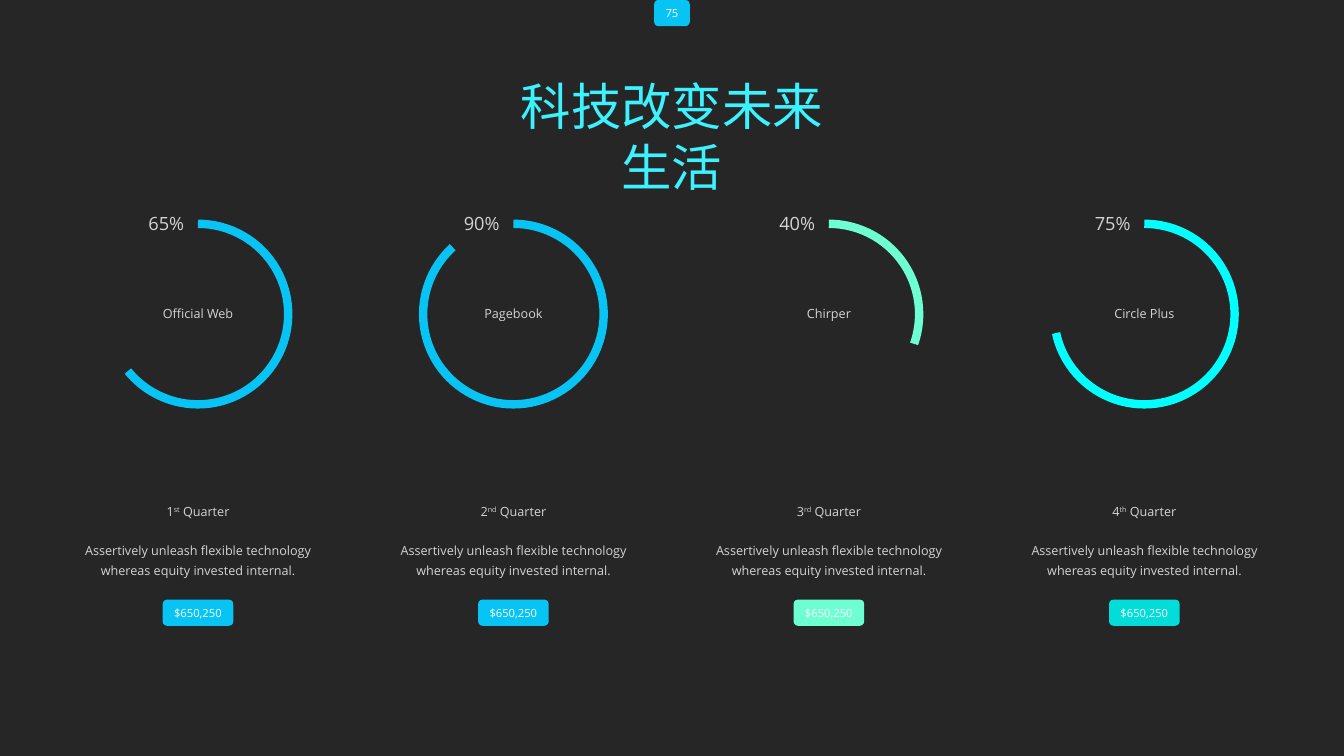
import dataclasses

import lxml.etree
import pptx
import pptx.dml.color
import pptx.enum.shapes
import pptx.enum.text
import pptx.oxml.ns
import pptx.shapes.autoshape
import pptx.slide
import pptx.text.text
import pptx.util

Cm = pptx.util.Cm
Shapes = pptx.enum.shapes.MSO_SHAPE
CENTER = pptx.enum.text.PP_ALIGN.CENTER
TOP = pptx.enum.text.MSO_ANCHOR.TOP
MIDDLE = pptx.enum.text.MSO_ANCHOR.MIDDLE


@dataclasses.dataclass(frozen=True)
class Theme:
    background: str = "262626"
    body: str = "D4D4D4"
    white: str = "FFFFFF"
    title: str = "3CF2FF"
    blue: str = "08C4F5"
    mint: str = "6DFFD1"
    cyan: str = "02FFFF"
    teal: str = "02DDDA"
    latin: str = "Open Sans"
    chinese: str = "Noto Sans CJK SC"
    pill_size: float = 8
    body_size: float = 9
    percent_size: float = 13
    title_size: float = 36
    ring_width: float = 6
    line_spacing: float = 1.3
    heading_gap: float = 14


THEME = Theme()


@dataclasses.dataclass(frozen=True)
class Quarter:
    ordinal: str
    suffix: str
    channel: str
    percent: str
    arc_end: float  # degrees clockwise from three o'clock
    ring_color: str
    pill_color: str


@dataclasses.dataclass(frozen=True)
class Area:
    """A rectangle in centimetres, placed by its horizontal centre."""
    center: float
    top: float
    width: float
    height: float

    def lengths(self) -> tuple[int, int, int, int]:
        left = self.center - self.width / 2
        return Cm(left), Cm(self.top), Cm(self.width), Cm(self.height)


QUARTERS = [
    Quarter("1", "st", "Official Web", "65%", 140.86, THEME.blue, THEME.blue),
    Quarter("2", "nd", "Pagebook", "90%", 227.78, THEME.blue, THEME.blue),
    Quarter("3", "rd", "Chirper", "40%", 19.27, THEME.mint, THEME.mint),
    Quarter("4", "th", "Circle Plus", "75%", 167.88, THEME.cyan, THEME.teal),
]
SUMMARY = "Assertively unleash flexible technology whereas equity invested internal."
AMOUNT = "$650,250"
SLIDE_WIDTH, SLIDE_HEIGHT = 33.87, 19.05
FIRST_CENTER, COLUMN_PITCH = 4.99, 7.95
RING_TOP, RING_SIZE = 5.64, 4.55
ARC_START = 270
ARC_UNITS_PER_DEGREE = 0.6  # 60000ths of a degree, in adjustment units of 100000


def rgb(color: str) -> pptx.dml.color.RGBColor:
    return pptx.dml.color.RGBColor.from_string(color)


def add_span(para: pptx.text.text._Paragraph, text: str, size: float, color: str,
             font: str = THEME.latin, baseline: int = 0) -> None:
    span = para.add_run()
    span.text = text
    span.font.size = pptx.util.Pt(size)
    span.font.name = font
    span.font.color.rgb = rgb(color)
    properties = span.font._element
    if baseline:
        properties.set("baseline", str(baseline * 1000))
    # East Asian typeface follows the Latin one
    east_asian = lxml.etree.SubElement(properties, pptx.oxml.ns.qn("a:ea"))
    east_asian.set("typeface", font)


def set_frame(frame: pptx.text.text.TextFrame, wrap: bool,
              anchor: pptx.enum.text.MSO_ANCHOR) -> pptx.text.text._Paragraph:
    frame.word_wrap = wrap
    frame.vertical_anchor = anchor
    para = frame.paragraphs[0]
    para.alignment = CENTER
    return para


def add_label(page: pptx.slide.Slide, area: Area, text: str, size: float,
              color: str = THEME.body, font: str = THEME.latin, wrap: bool = False,
              anchor: pptx.enum.text.MSO_ANCHOR = MIDDLE) -> None:
    box = page.shapes.add_textbox(*area.lengths())
    add_span(set_frame(box.text_frame, wrap, anchor), text, size, color, font)


def add_pill(page: pptx.slide.Slide, area: Area, text: str, color: str) -> None:
    pill = page.shapes.add_shape(Shapes.ROUNDED_RECTANGLE, *area.lengths())
    pill.shadow.inherit = False
    pill.fill.solid()
    pill.fill.fore_color.rgb = rgb(color)
    pill.line.fill.background()
    add_span(set_frame(pill.text_frame, False, MIDDLE), text, THEME.pill_size, THEME.white)


def add_ring(page: pptx.slide.Slide, area: Area, quarter: Quarter) -> None:
    ring = page.shapes.add_shape(Shapes.ARC, *area.lengths())
    ring.shadow.inherit = False
    ring.adjustments[0] = ARC_START * ARC_UNITS_PER_DEGREE
    ring.adjustments[1] = quarter.arc_end * ARC_UNITS_PER_DEGREE
    ring.fill.background()
    ring.line.color.rgb = rgb(quarter.ring_color)
    ring.line.width = pptx.util.Pt(THEME.ring_width)


def add_summary(page: pptx.slide.Slide, area: Area, quarter: Quarter) -> None:
    box = page.shapes.add_textbox(*area.lengths())
    heading = set_frame(box.text_frame, True, TOP)
    heading.space_after = pptx.util.Pt(THEME.heading_gap)
    for text, baseline in ((quarter.ordinal, 0), (quarter.suffix, 30), (" Quarter", 0)):
        add_span(heading, text, THEME.body_size, THEME.body, baseline=baseline)
    body = box.text_frame.add_paragraph()
    body.alignment = CENTER
    add_span(body, SUMMARY, THEME.body_size, THEME.body)
    for para in (heading, body):
        para.line_spacing = THEME.line_spacing


def add_quarter(page: pptx.slide.Slide, center: float, quarter: Quarter) -> None:
    add_ring(page, Area(center, RING_TOP, RING_SIZE, RING_SIZE), quarter)
    add_label(page, Area(center, 7.59, 2.3, 0.64), quarter.channel, THEME.body_size)
    add_label(page, Area(center - 0.8, 5.23, 1.42, 0.81), quarter.percent,
              THEME.percent_size)
    add_summary(page, Area(center, 12.45, 6.25, 2.26), quarter)
    add_pill(page, Area(center, 15.11, 1.78, 0.66), AMOUNT, quarter.pill_color)


def main() -> None:
    deck = pptx.Presentation()
    deck.slide_width, deck.slide_height = Cm(SLIDE_WIDTH), Cm(SLIDE_HEIGHT)
    page = deck.slides.add_slide(deck.slide_layouts[6])
    page.background.fill.solid()
    page.background.fill.fore_color.rgb = rgb(THEME.background)

    # Page number and title
    middle = SLIDE_WIDTH / 2
    add_pill(page, Area(middle, 0, 0.9, 0.66), "75", THEME.blue)
    add_label(page, Area(middle, 1.78, 8.2, 3.3), "科技改变未来生活", THEME.title_size,
              THEME.title, THEME.chinese, wrap=True, anchor=TOP)

    # One column for each quarter
    for index, quarter in enumerate(QUARTERS):
        add_quarter(page, FIRST_CENTER + index * COLUMN_PITCH, quarter)

    deck.save("out.pptx")


if __name__ == "__main__":
    main()
